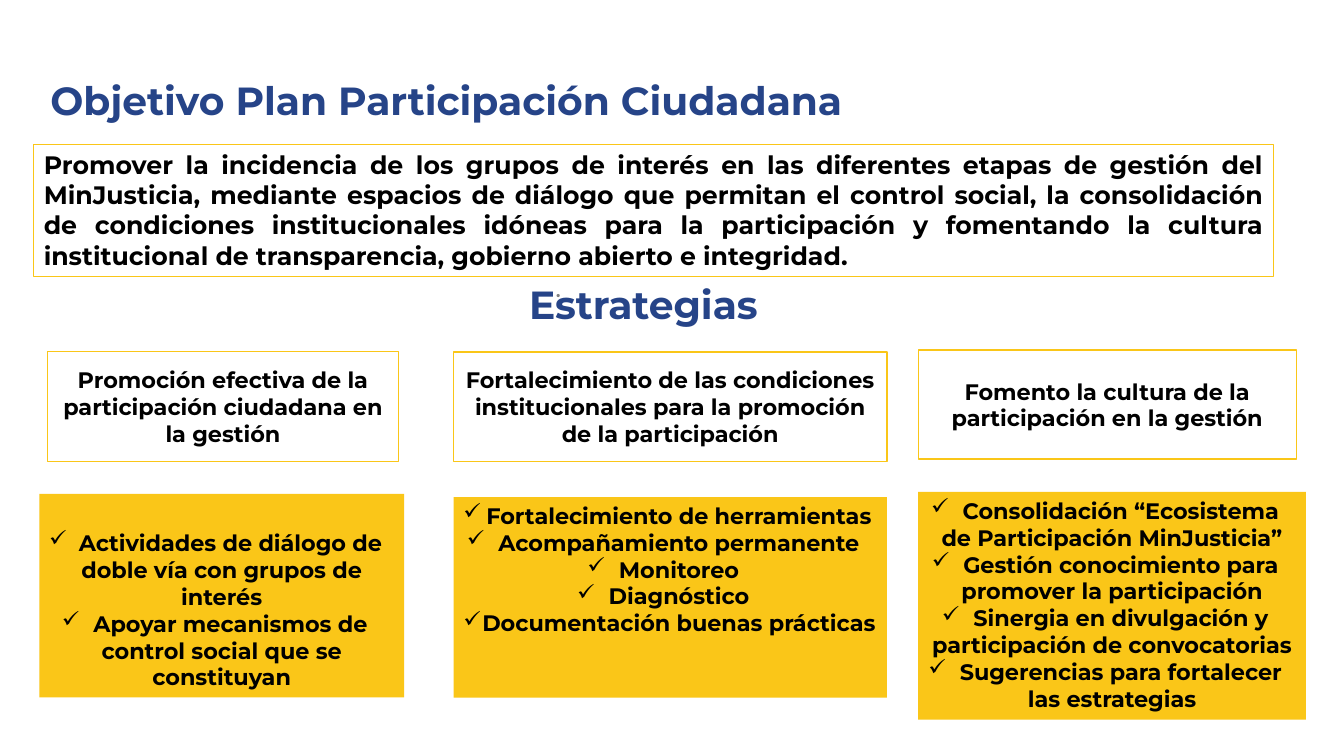
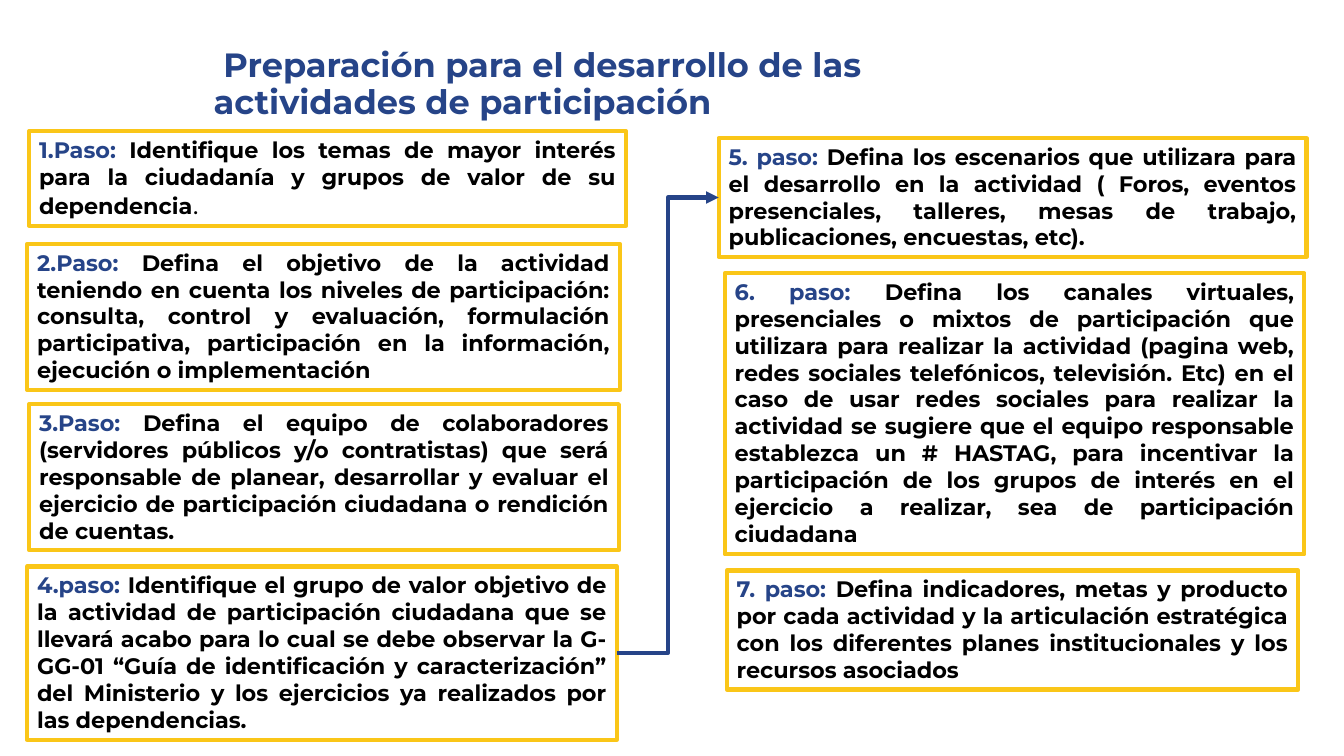
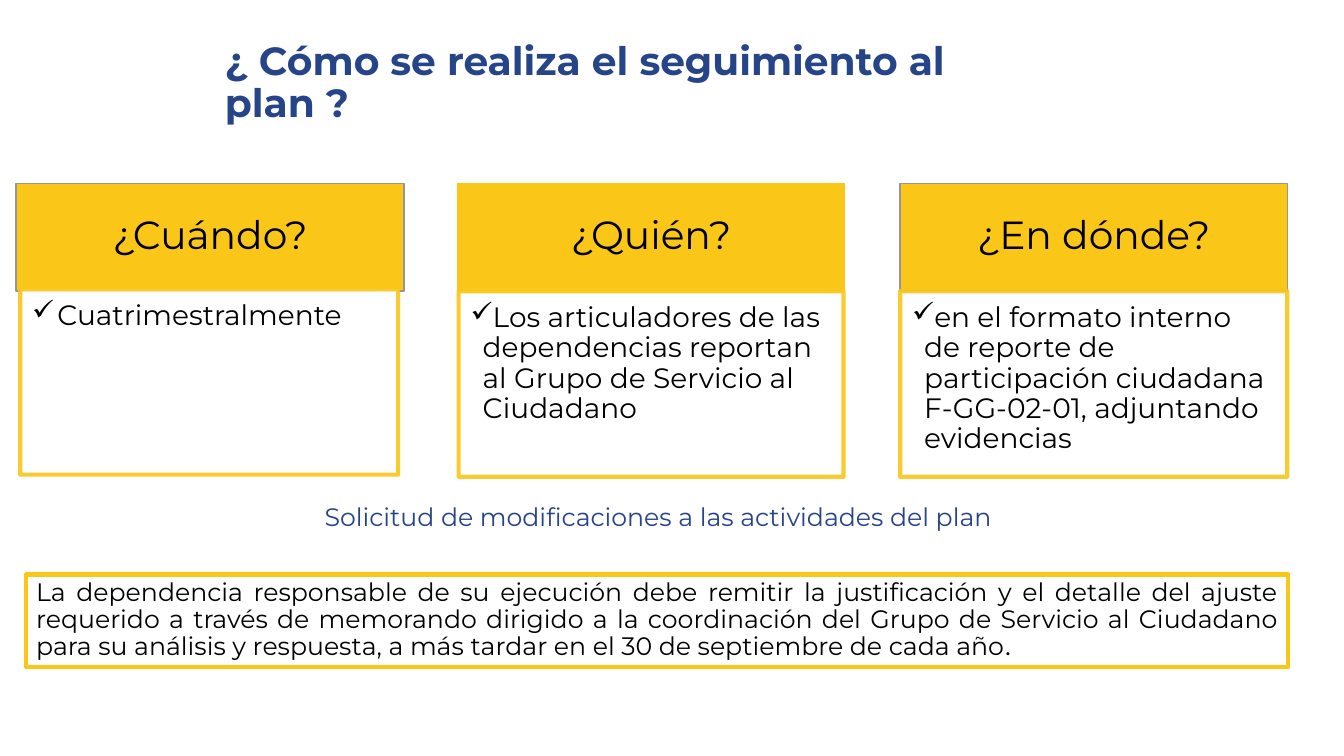
from lxml import etree
from pptx import Presentation
from pptx.dml.color import RGBColor
from pptx.enum.shapes import MSO_CONNECTOR, MSO_SHAPE
from pptx.enum.text import MSO_ANCHOR, MSO_AUTO_SIZE, PP_ALIGN
from pptx.oxml.ns import qn
from pptx.util import Pt

RECTANGLE = MSO_SHAPE.RECTANGLE
ELBOW = MSO_CONNECTOR.ELBOW
TOP, MIDDLE = MSO_ANCHOR.TOP, MSO_ANCHOR.MIDDLE
LEFT, CENTER, JUSTIFY = PP_ALIGN.LEFT, PP_ALIGN.CENTER, PP_ALIGN.JUSTIFY
NO_AUTOSIZE = MSO_AUTO_SIZE.NONE

FONT = "Montserrat"
SECOND_FONT = "Calibri"
TITLE_ONLY = 5
RIGHT_SITE, LEFT_SITE = 3, 1
COLORS = {
    "blue": "264488",
    "yellow": "FAC618",
    "black": "000000",
    "white": "FFFFFF",
    "gray": "969696",
    "dot": "808080",
}


def rgb(name):
    return RGBColor.from_string(COLORS[name])


def points(box):
    return [Pt(value) for value in box]


# Shared text and shape styles
def set_frame(shape, anchor=TOP, insets=(7.2, 3.6, 7.2, 3.6)):
    frame = shape.text_frame
    frame.word_wrap = True
    frame.auto_size = NO_AUTOSIZE
    frame.vertical_anchor = anchor
    (frame.margin_left, frame.margin_top,
     frame.margin_right, frame.margin_bottom) = points(insets)
    return frame


def set_paragraph(paragraph, size, color="black", bold=False, align=LEFT, spacing=1.0):
    paragraph.alignment = align
    paragraph.line_spacing = spacing
    font = paragraph.font
    font.name, font.size, font.bold = FONT, Pt(size), bold
    font.color.rgb = rgb(color)


def set_bullet(paragraph, margin, indent):
    properties = paragraph._p.get_or_add_pPr()
    properties.set("marL", str(Pt(margin)))
    properties.set("indent", str(Pt(indent)))
    etree.SubElement(properties, qn("a:buChar")).set("char", "✓")


def set_alpha(shape, percent):
    for color in shape._element.spPr.iter(qn("a:srgbClr")):
        etree.SubElement(color, qn("a:alpha")).set("val", str(percent * 1000))


def add_box(slide, box, fill=None, line=None, width=1):
    shape = slide.shapes.add_shape(RECTANGLE, *points(box))
    shape.shadow.inherit = False
    if fill:
        shape.fill.solid()
        shape.fill.fore_color.rgb = rgb(fill)
    else:
        shape.fill.background()
    if line:
        shape.line.color.rgb = rgb(line)
        shape.line.width = Pt(width)
    else:
        shape.line.fill.background()
    return shape


def add_text(slide, box, text, anchor=TOP, **style):
    shape = slide.shapes.add_textbox(*points(box))
    paragraph = set_frame(shape, anchor).paragraphs[0]
    paragraph.text = text
    set_paragraph(paragraph, **style)


def add_titled_slide(presentation, box, text, size=28, first_indent=0):
    slide = presentation.slides.add_slide(presentation.slide_layouts[TITLE_ONLY])
    title = slide.shapes.title
    title.left, title.top, title.width, title.height = points(box)
    paragraph = set_frame(title, MIDDLE).paragraphs[0]
    paragraph.text = text
    paragraph._p.get_or_add_pPr().set("indent", str(Pt(first_indent)))
    set_paragraph(paragraph, size, "blue", True, spacing=0.9)
    return slide


# Slide 1: objective and strategies
def add_strategy_heading(slide, box, text):
    shape = add_box(slide, box, "white", "yellow")
    paragraph = set_frame(shape, MIDDLE).paragraphs[0]
    paragraph.text = text
    set_paragraph(paragraph, 16, bold=True, align=CENTER)


def add_strategy_actions(slide, box, actions, top_inset):
    shape = add_box(slide, box, "yellow")
    frame = set_frame(shape, insets=(7.2, top_inset, 7.2, 3.6))
    for index, action in enumerate(actions):
        paragraph = frame.paragraphs[0] if index == 0 else frame.add_paragraph()
        paragraph.text = action
        set_bullet(paragraph, 0, -22.5)
        set_paragraph(paragraph, 16, bold=True, align=CENTER)


def build_objective(presentation):
    slide = add_titled_slide(presentation, (28.8, 44.6, 627, 57.6),
                             "Objetivo Plan Participación Ciudadana")
    add_text(slide, (390.2, 195.1, 243.4, 211.7), ".",
             size=11.8, color="dot", bold=True, spacing=1.15)
    objective = add_box(slide, (24.2, 103, 885.2, 94.4), line="yellow", width=0.75)
    paragraph = set_frame(objective).paragraphs[0]
    paragraph.text = (
        "Promover la incidencia de los grupos de interés en las diferentes etapas de "
        "gestión del MinJusticia, mediante espacios de diálogo que permitan el control "
        "social, la consolidación de condiciones institucionales idóneas para la "
        "participación y fomentando la cultura institucional de transparencia, gobierno "
        "abierto e integridad.")
    set_paragraph(paragraph, 18, bold=True, align=JUSTIFY)
    add_text(slide, (370.8, 190.1, 209.5, 57.6), "Estrategias", MIDDLE,
             size=28, color="blue", bold=True, spacing=0.9)

    strategies = [
        ((34, 251, 250.6, 78.5),
         "Promoción efectiva de la participación ciudadana en la gestión",
         (28.1, 352.8, 260.6, 145.4), 25.2,
         ["Actividades de diálogo de doble vía con grupos de interés",
          "Apoyar mecanismos de control social que se constituyan"]),
        ((324, 251.5, 309.6, 78),
         "Fortalecimiento de las condiciones institucionales para la promoción de la "
         "participación",
         (324, 355, 309.6, 143.3), 3.6,
         ["Fortalecimiento de herramientas", "Acompañamiento permanente", "Monitoreo",
          "Diagnóstico", "Documentación buenas prácticas"]),
        ((655.9, 250, 270, 78),
         "Fomento la cultura de la participación en la gestión",
         (655.9, 351.4, 277, 162.7), 3.6,
         ["Consolidación “Ecosistema de Participación MinJusticia”",
          "Gestión conocimiento para promover la participación",
          "Sinergia en divulgación y participación de convocatorias",
          "Sugerencias para fortalecer las estrategias"]),
    ]
    for heading_box, heading, actions_box, top_inset, actions in strategies:
        add_strategy_heading(slide, heading_box, heading)
        add_strategy_actions(slide, actions_box, actions, top_inset)


# Slide 2: preparation steps
def add_step(slide, box, label, text):
    shape = add_box(slide, box, line="yellow", width=3)
    paragraph = set_frame(shape).paragraphs[0]
    set_paragraph(paragraph, 16, bold=True, align=JUSTIFY)
    label_run = paragraph.add_run()
    label_run.text = label + " "
    label_run.font.color.rgb = rgb("blue")
    paragraph.add_run().text = text
    return shape


def add_step_arrow(slide, source, target):
    arrow = slide.shapes.add_connector(ELBOW, 0, 0, 0, 0)
    arrow.begin_connect(source, RIGHT_SITE)
    arrow.end_connect(target, LEFT_SITE)
    arrow.line.color.rgb = rgb("blue")
    arrow.line.width = Pt(3)
    etree.SubElement(arrow.line._get_or_add_ln(), qn("a:tailEnd")).set("type", "triangle")
    etree.SubElement(arrow._element.spPr, qn("a:effectLst"))


def build_preparation(presentation):
    slide = add_titled_slide(
        presentation, (145.4, 33.8, 552.2, 54),
        "Preparación para el desarrollo de las actividades de participación", 24, 7)
    steps = [
        ((20.9, 93.6, 426.2, 67.7), "1.Paso:",
         "Identifique los temas de mayor interés para la ciudadanía y grupos de valor de "
         "su dependencia"),
        ((19.4, 174.2, 423.4, 104.4), "2.Paso:",
         "Defina el objetivo de la actividad teniendo en cuenta los niveles de "
         "participación: consulta, control y evaluación, formulación participativa, "
         "participación en la información, ejecución o implementación"),
        ((20.9, 288.7, 421.2, 104.4), "3.Paso:",
         "Defina el equipo de colaboradores (servidores públicos y/o contratistas) que "
         "será responsable de planear, desarrollar y evaluar el ejercicio de "
         "participación ciudadana o rendición de cuentas."),
        ((19.4, 404.6, 421.2, 123.8), "4.paso:",
         "Identifique el grupo de valor objetivo de la actividad de participación "
         "ciudadana que se llevará acabo para lo cual se debe observar la G-GG-01 “Guía "
         "de identificación y caracterización” del Ministerio y los ejercicios ya "
         "realizados por las dependencias."),
        ((513.4, 98.6, 419.8, 85), "5. paso:",
         "Defina los escenarios que utilizara para el desarrollo en la actividad ( Foros, "
         "eventos presenciales, talleres, mesas de trabajo, publicaciones, encuestas, "
         "etc)."),
        ((517.7, 195.1, 414, 200.9), "6. paso:",
         "Defina los canales virtuales, presenciales o mixtos de participación que "
         "utilizara para realizar la actividad (pagina web, redes sociales telefónicos, "
         "televisión. Etc) en el caso de usar redes sociales para realizar la actividad "
         "se sugiere que el equipo responsable establezca un # HASTAG, para incentivar "
         "la participación de los grupos de interés en el ejercicio a realizar, sea de "
         "participación ciudadana"),
        ((519.1, 407.5, 408.2, 85), "7. paso:",
         "Defina indicadores, metas y producto por cada actividad y la articulación "
         "estratégica con los diferentes planes institucionales y los recursos asociados"),
    ]
    shapes = [add_step(slide, *step) for step in steps]
    full_stop = shapes[0].text_frame.paragraphs[0].add_run()
    full_stop.text = "."
    full_stop.font.name, full_stop.font.size = SECOND_FONT, Pt(18)
    full_stop.font.bold = False
    add_step_arrow(slide, shapes[3], shapes[4])


# Slide 3: follow-up
def add_question_card(slide, header_box, body_box, question, answer, border, hanging):
    header = add_box(slide, header_box, "yellow", border)
    paragraph = set_frame(header, MIDDLE, (15.8, 8.6, 15.8, 8.6)).paragraphs[0]
    paragraph.text = question
    set_paragraph(paragraph, 28, align=CENTER, spacing=0.9)

    body = add_box(slide, body_box, "white", "yellow", 3)
    set_alpha(body, 90)
    paragraph = set_frame(body, insets=(8.6, 8.6, 11.5, 12.2)).paragraphs[0]
    paragraph.text = answer
    set_bullet(paragraph, hanging, -hanging)
    set_paragraph(paragraph, 20, spacing=0.9)


def build_follow_up(presentation):
    slide = add_titled_slide(presentation, (153.4, 28.1, 543.6, 63.4),
                             "¿ Cómo se realiza el seguimiento al plan ?")
    cards = [
        ((11.5, 131, 277.2, 77), (14.4, 206.6, 270, 132.5),
         "¿Cuándo?", "Cuatrimestralmente", "gray", 18),
        ((326.9, 131, 276.5, 77), (327.6, 208.1, 275, 132.5),
         "¿Quién?",
         "Los articuladores de las dependencias reportan al Grupo de Servicio al Ciudadano",
         "yellow", 8.6),
        ((643, 131, 276.5, 77), (643, 208.1, 276.5, 132.5),
         "¿En dónde?",
         "en el formato interno de reporte de participación ciudadana F-GG-02-01, "
         "adjuntando evidencias", "gray", 8.6),
    ]
    for card in cards:
        add_question_card(slide, *card)

    # Changes to the plan
    add_text(slide, (38.2, 357.1, 864, 26.6),
             "Solicitud de modificaciones a las actividades del plan",
             size=18, color="blue", align=CENTER, spacing=0.9)
    request = add_box(slide, (18.7, 410.4, 901.4, 66.2), line="yellow", width=3)
    paragraph = set_frame(request).paragraphs[0]
    paragraph.add_run().text = (
        "La dependencia responsable de su ejecución debe remitir la justificación y el "
        "detalle del ajuste requerido a través de memorando dirigido a la coordinación "
        "del Grupo de Servicio al Ciudadano para su análisis y respuesta, a más tardar "
        "en el 30 de septiembre de cada año")
    full_stop = paragraph.add_run()
    full_stop.text = "."
    full_stop.font.name = SECOND_FONT
    set_paragraph(paragraph, 18, align=JUSTIFY, spacing=0.9)


def main():
    presentation = Presentation()
    presentation.slide_width, presentation.slide_height = Pt(960), Pt(540)
    build_objective(presentation)
    build_preparation(presentation)
    build_follow_up(presentation)
    presentation.save("out.pptx")


if __name__ == "__main__":
    main()
